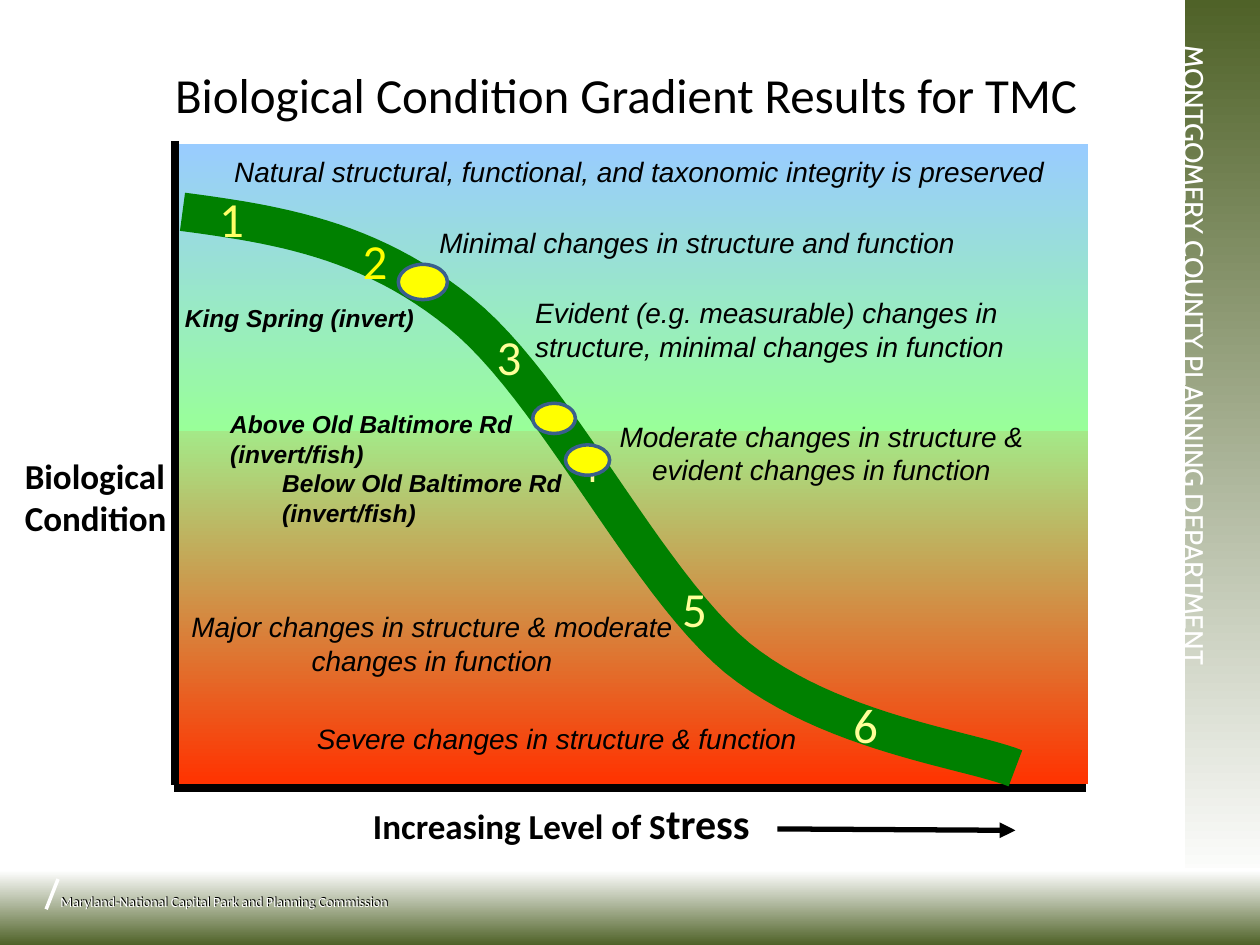
from lxml.etree import SubElement
from pptx import Presentation
from pptx.dml.color import RGBColor
from pptx.enum.shapes import MSO_CONNECTOR, MSO_SHAPE
from pptx.enum.text import PP_ALIGN
from pptx.oxml.ns import qn
from pptx.util import Cm, Pt

BLACK = RGBColor(0x00, 0x00, 0x00)
WHITE = RGBColor(0xFF, 0xFF, 0xFF)
OLIVE = RGBColor(0x4F, 0x62, 0x28)
SKY = RGBColor(0x99, 0xCC, 0xFF)
MINT = RGBColor(0x99, 0xFF, 0x99)
RED = RGBColor(0xFF, 0x33, 0x00)
CURVE_GREEN = RGBColor(0x00, 0x80, 0x00)
YELLOW = RGBColor(0xFF, 0xFF, 0x00)
LEMON = RGBColor(0xFF, 0xFF, 0x66)
PALE_YELLOW = RGBColor(0xFF, 0xFF, 0x99)
MARKER_BLUE = RGBColor(0x3A, 0x5F, 0x8C)
LEFT, CENTER = PP_ALIGN.LEFT, PP_ALIGN.CENTER

# All positions and sizes are in centimetres: left, top, width, height
DEPARTMENT = "MONTGOMERY COUNTY PLANNING DEPARTMENT"
COMMISSION = "Maryland-National Capital Park and Planning Commission"
TITLE = "Biological Condition Gradient Results for TMC"
VERTICAL_AXIS = "Biological\nCondition"
HORIZONTAL_AXIS = [("Increasing Level of S", 20), ("tress", 24)]

# Box, first colour, last colour, last position, clockwise angle
SIDE_BANDS = [
    ((23.88, 0, 1.52, 19.05), OLIVE, WHITE, 0.94, 90),
    ((0, 17.5, 25.4, 1.55), OLIVE, WHITE, 0.97, 270),
]
CHART_BANDS = [
    ((3.51, 7.82, 18.42, 7.98), MINT, RED, 1, 90),
    ((3.51, 2.9, 18.42, 5.79), SKY, MINT, 1, 90),
]
AXES = [(3.53, 2.84, 3.53, 15.82), (3.51, 15.88, 21.89, 15.88)]
STRESS_ARROW = (15.67, 16.71, 20.47, 16.74)
EMBLEM_LINE = (1.17, 17.72, 0.93, 18.33)

# Start point, then control, control, end for each segment
CURVE = [
    (3.68, 4.27),
    (5.54, 4.52), (7.42, 4.8), (9.27, 6.3),
    (11.15, 7.8), (13, 11.71), (14.86, 13.26),
    (16.74, 14.78), (19.53, 15.11), (20.47, 15.49),
]

# Text, box, alignment, wrap
DESCRIPTIONS = [
    ("Natural structural, functional, and taxonomic integrity is preserved",
     (4.37, 3, 17.04, 0.94), CENTER, False),
    ("Minimal changes in structure and function",
     (8.61, 4.42, 13.46, 1.96), LEFT, True),
    ("Evident (e.g. measurable) changes in structure, minimal changes in function",
     (10.54, 5.84, 11.38, 2.64), LEFT, True),
    ("Moderate changes in structure & evident changes in function",
     (11.86, 8.33, 9.4, 1.63), CENTER, True),
    ("Major changes in structure & moderate changes in function",
     (3.4, 12.17, 10.62, 1.63), CENTER, True),
    ("Severe changes in structure & function",
     (6.07, 14.43, 10.31, 1.96), CENTER, False),
]

# Centre, top, colour; the levels count from 1
LEVELS = [
    (4.67, 3.68, LEMON), (7.56, 4.52, YELLOW), (10.26, 6.45, PALE_YELLOW),
    (11.84, 8.61, PALE_YELLOW), (14, 11.53, PALE_YELLOW), (17.45, 13.87, PALE_YELLOW),
]
LEVEL_SIZE = (1.1, 1.32)

# Site, label box, marker box
SITES = [
    ("King Spring (invert)", (3.48, 5.99, 5.87, 1.96), (8.03, 5.33, 0.99, 0.71)),
    ("Above Old Baltimore Rd (invert/fish)", (4.39, 8.13, 6.81, 2.51), (10.74, 8.13, 0.86, 0.61)),
    ("Below Old Baltimore Rd (invert/fish)", (5.44, 9.32, 6.6, 2.51), (11.4, 8.97, 0.89, 0.61)),
]


def lengths(values):
    return [Cm(value) for value in values]


def add_text(slide, text, box, size, color=BLACK, font="Calibri", bold=False,
             italic=False, align=LEFT, wrap=True):
    """Add a text box; text is a string or a list of (text, size) runs."""
    shape = slide.shapes.add_textbox(*lengths(box))
    frame = shape.text_frame
    frame.word_wrap = wrap
    if isinstance(text, str):
        frame.text = text
    else:
        for words, run_size in text:
            run = frame.paragraphs[0].add_run()
            run.text = words
            run.font.size = Pt(run_size)
    for paragraph in frame.paragraphs:
        paragraph.alignment = align
        paragraph.font.size = Pt(size)
        paragraph.font.name = font
        paragraph.font.bold = bold
        paragraph.font.italic = italic
        paragraph.font.color.rgb = color
    return shape


def add_band(slide, box, first, last, last_position, angle):
    band = slide.shapes.add_shape(MSO_SHAPE.RECTANGLE, *lengths(box))
    band.shadow.inherit = False
    band.line.fill.background()
    band.fill.gradient()
    band.fill.gradient_angle = 360 - angle
    for stop, color, position in zip(band.fill.gradient_stops, (first, last), (0, last_position)):
        stop.color.rgb = color
        stop.position = position


def add_line(slide, ends, color, width, arrow=False):
    line = slide.shapes.add_connector(MSO_CONNECTOR.STRAIGHT, *lengths(ends))
    line.line.color.rgb = color
    line.line.width = Pt(width)
    if arrow:
        SubElement(line.line._get_or_add_ln(), qn("a:tailEnd"), type="triangle")
    SubElement(line._element.spPr, qn("a:effectLst"))


def curve_points(points, steps=24):
    """Sample a chain of cubic Bezier segments."""
    sampled = [points[0]]
    for start in range(0, len(points) - 1, 3):
        segment = points[start:start + 4]
        for step in range(1, steps + 1):
            t = step / steps
            weights = ((1 - t) ** 3, 3 * t * (1 - t) ** 2, 3 * t ** 2 * (1 - t), t ** 3)
            sampled.append(tuple(
                sum(weight * point[axis] for weight, point in zip(weights, segment))
                for axis in (0, 1)))
    return sampled


def add_curve(slide):
    first, *others = [lengths(point) for point in curve_points(CURVE)]
    builder = slide.shapes.build_freeform(*first)
    builder.add_line_segments(others, close=False)
    curve = builder.convert_to_shape()
    curve.shadow.inherit = False
    curve.fill.background()
    curve.line.color.rgb = CURVE_GREEN
    curve.line.width = Pt(22)


def add_marker(slide, box):
    marker = slide.shapes.add_shape(MSO_SHAPE.OVAL, *lengths(box))
    marker.shadow.inherit = False
    marker.fill.solid()
    marker.fill.fore_color.rgb = YELLOW
    marker.line.color.rgb = MARKER_BLUE
    marker.line.width = Pt(2)


def add_frame(slide):
    for band in SIDE_BANDS:
        add_band(slide, *band)
    department = add_text(slide, DEPARTMENT, (16.1, 8.18, 15.95, 0.94), 16, WHITE, "Cabin")
    department.rotation = 90
    add_line(slide, EMBLEM_LINE, WHITE, 2)
    add_text(slide, COMMISSION, (0.99, 17.86, 10.8, 0.61), 8)
    add_text(slide, COMMISSION, (0.97, 17.88, 10.8, 0.61), 8, WHITE)


def add_gradient_chart(slide):
    for band in CHART_BANDS:
        add_band(slide, *band)
    for axis in AXES:
        add_line(slide, axis, BLACK, 4.5)
    add_text(slide, VERTICAL_AXIS, (0.25, 9.04, 3.99, 1.96), 20, bold=True)
    add_text(slide, TITLE, (3.28, 1.17, 19, 1.45), 28)
    add_text(slide, HORIZONTAL_AXIS, (7.27, 15.95, 8.4, 1.27), 24, bold=True)
    add_curve(slide)
    for text, box, align, wrap in DESCRIPTIONS:
        add_text(slide, text, box, 16, font="Arial", italic=True, align=align, wrap=wrap)
    width, height = LEVEL_SIZE
    for level, (center, top, color) in enumerate(LEVELS, 1):
        add_text(slide, str(level), (center - width / 2, top, width, height), 28, color, align=CENTER)
    add_line(slide, STRESS_ARROW, BLACK, 3, arrow=True)
    for site, label_box, marker_box in SITES:
        add_marker(slide, marker_box)
        add_text(slide, site, label_box, 14, font="Arial", bold=True, italic=True)


def main():
    presentation = Presentation()
    presentation.slide_width, presentation.slide_height = Cm(25.4), Cm(19.05)
    slide = presentation.slides.add_slide(presentation.slide_layouts[6])
    add_frame(slide)
    add_gradient_chart(slide)
    presentation.save("out.pptx")


if __name__ == "__main__":
    main()
